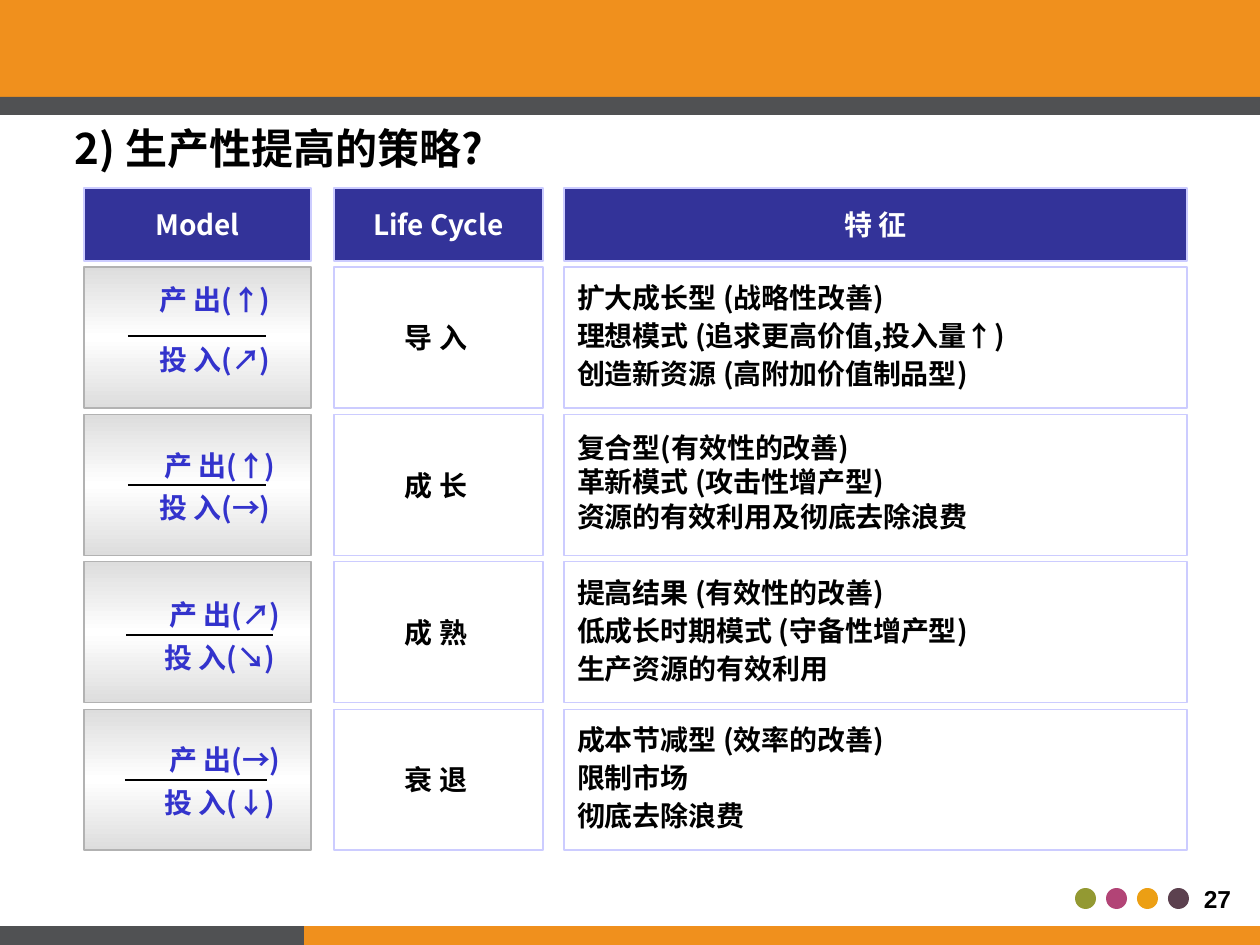
from copy import deepcopy

from lxml import etree
from pptx import Presentation
from pptx import util as u
from pptx.dml.color import RGBColor
from pptx.enum import shapes, text
from pptx.oxml.ns import qn

PX = 914400 / 126
CJK = "Noto Sans CJK SC"
BLACK = RGBColor(0x00, 0x00, 0x00)
WHITE = RGBColor(0xFF, 0xFF, 0xFF)
ORANGE = RGBColor(0xF0, 0x90, 0x1D)
GRAY = RGBColor(0x50, 0x51, 0x53)
NAVY = RGBColor(0x33, 0x33, 0x99)
BLUE = RGBColor(0x33, 0x33, 0xCC)
LILAC = RGBColor(0xCC, 0xCC, 0xFF)
SILVER = RGBColor(0xDD, 0xDD, 0xDD)
EDGE = RGBColor(0xB2, 0xB2, 0xB2)
DOTS = [RGBColor(0x93, 0x99, 0x32), RGBColor(0xB2, 0x44, 0x76),
        RGBColor(0xEC, 0x9F, 0x14), RGBColor(0x5C, 0x41, 0x4F)]

deck = Presentation()
deck.slide_width, deck.slide_height = u.Inches(10), u.Inches(7.5)
slide = deck.slides.add_slide(deck.slide_layouts[6])
tree = slide.shapes


def add_box(x, y, w, h, fill=None, line=None, kind=shapes.MSO_SHAPE.RECTANGLE):
    """Add a preset shape, with lengths in px."""
    box = tree.add_shape(kind, *(round(n * PX) for n in (x, y, w, h)))
    box.shadow.inherit = False
    if fill is None:
        box.fill.background()
    else:
        box.fill.solid()
        box.fill.fore_color.rgb = fill
    if line is None:
        box.line.fill.background()
    else:
        box.line.color.rgb = line
        box.line.width = u.Pt(0.75)
    return box


def put_text(frame, lines, size=16, color=BLACK, font=CJK, align="CENTER",
             inset=(13, 6, 13, 6), pitch=1.0, gap=0):
    frame.word_wrap = True
    frame.vertical_anchor = text.MSO_ANCHOR.MIDDLE
    (frame.margin_left, frame.margin_top,
     frame.margin_right, frame.margin_bottom) = (round(n * PX) for n in inset)
    for i, line in enumerate(lines):
        para = frame.paragraphs[0] if i == 0 else frame.add_paragraph()
        para.alignment = text.PP_ALIGN[align]
        para.line_spacing = pitch
        para.space_before = u.Pt(gap if i else 0)
        run = para.add_run()
        run.text = line
        run.font.size, run.font.bold = u.Pt(size), True
        run.font.name = font
        run.font.color.rgb = color
        east = etree.SubElement(run.font._element, qn("a:ea"))
        east.set("typeface", font)


# Page frame
for i, color in enumerate(DOTS):
    add_box(1075 + 31 * i, 888, 21, 21, color, kind=shapes.MSO_SHAPE.OVAL)
for x, y, w, h, color in [(0, 0, 1260, 97, ORANGE), (0, 97, 1260, 18, GRAY),
                          (246, 926, 1014, 19, ORANGE), (0, 926, 304, 19, GRAY)]:
    add_box(x, y, w, h, color)


def add_label(x, y, w, h, words, **form):
    """Add a text box, with lengths in px."""
    box = tree.add_textbox(*(round(n * PX) for n in (x, y, w, h)))
    put_text(box.text_frame, [words], **form)


add_label(1190, 877, 55, 43, "27", size=14, font="Arial", inset=(0, 0, 0, 0))
add_label(75, 116, 452, 64, "2) 生产性提高的策略?", size=24, align="LEFT",
          inset=(0, 6, 0, 6))

# Column heads
COLS = [(84, 227), (334, 209), (564, 623)]
for (x, w), word in zip(COLS, ["Model", "Life Cycle", "特 征"]):
    head = add_box(x, 188, w, 73, NAVY, LILAC)
    put_text(head.text_frame, [word], color=WHITE)

# Rows: stage, features, line pitch, output and input (sign, centre x, y),
# fraction bar (left, right, y)
ROWS = [
    ("导 入", ["扩大成长型 (战略性改善)", "理想模式 (追求更高价值,投入量↑)",
             "创造新资源 (高附加价值制品型)"], 0.9,
     ("↑", 215, 276), ("↗", 215, 336), (128, 266, 336)),
    ("成 长", ["复合型(有效性的改善)", "革新模式 (攻击性增产型)",
             "资源的有效利用及彻底去除浪费"], 0.8,
     ("↑", 220, 442), ("→", 215, 484), (128, 266, 485)),
    ("成 熟", ["提高结果 (有效性的改善)", "低成长时期模式 (守备性增产型)",
             "生产资源的有效利用"], 0.9,
     ("↗", 225, 591), ("↘", 220, 634), (126, 273, 635)),
    ("衰 退", ["成本节减型 (效率的改善)", "限制市场", "彻底去除浪费"], 0.9,
     ("→", 225, 736), ("↓", 220, 779), (125, 267, 780)),
]
for i, (stage, facts, pitch, out, put, bar) in enumerate(ROWS):
    y = 267 + 147.4 * i
    model, cycle, trait = [
        add_box(x, y, w, 141, WHITE, line)
        for (x, w), line in zip(COLS, [EDGE, LILAC, LILAC])]

    model.fill.gradient()
    model.fill.gradient_angle = 90
    stops = model._element.spPr.find(".//" + qn("a:gsLst"))
    stops.insert(1, deepcopy(stops[0]))
    shades = [(0, SILVER), (0.5, WHITE), (1, SILVER)]
    for stop, (place, color) in zip(model.fill.gradient_stops, shades):
        stop.position, stop.color.rgb = place, color

    put_text(cycle.text_frame, [stage], inset=(13, 6, 18, 6))
    put_text(trait.text_frame, facts, align="LEFT", inset=(13, 6, 18, 6),
             pitch=pitch, gap=4.4)
    for name, (sign, mid, top) in [("产 出", out), ("投 入", put)]:
        add_label(mid - 80, top, 160, 47, f"{name}({sign})", color=BLUE)

    left, right, level = bar
    rule = tree.add_connector(shapes.MSO_CONNECTOR.STRAIGHT, *(
        round(n * PX) for n in (left, level, right, level)))
    rule.line.color.rgb = BLACK
    rule.line.width = u.Pt(1)
    etree.SubElement(rule._element.spPr, qn("a:effectLst"))

deck.save("out.pptx")
